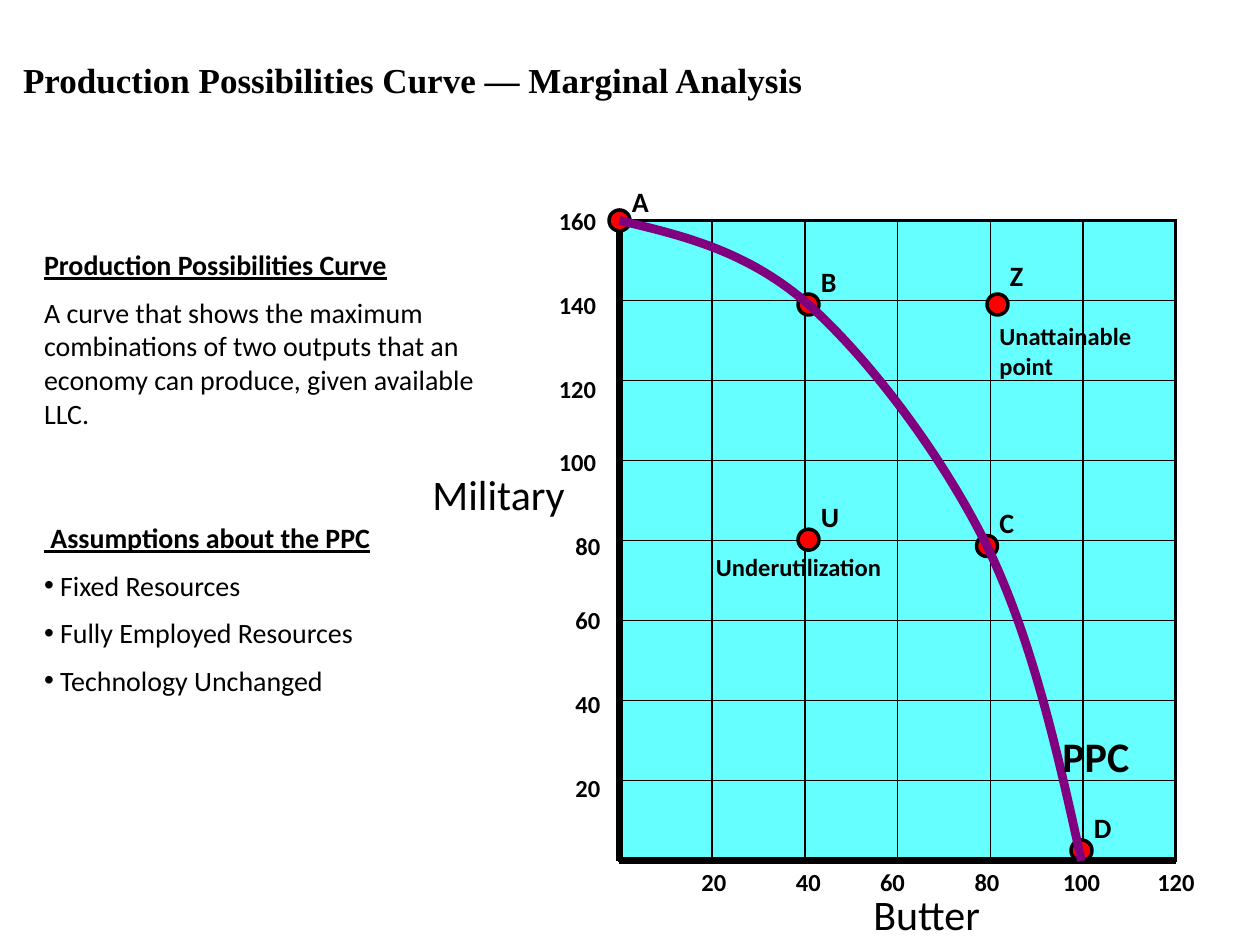
from dataclasses import dataclass

from lxml.etree import SubElement
from pptx import Presentation
from pptx.dml.color import RGBColor
from pptx.enum.shapes import MSO_CONNECTOR, MSO_SHAPE
from pptx.enum.text import MSO_ANCHOR, MSO_AUTO_SIZE, PP_ALIGN
from pptx.oxml.ns import qn
from pptx.util import Pt


@dataclass(frozen=True)
class Theme:
    ink: RGBColor = RGBColor(0, 0, 0)
    grid: RGBColor = RGBColor(0x66, 0xFF, 0xFF)
    dot: RGBColor = RGBColor(0xFF, 0, 0)
    curve: RGBColor = RGBColor(0x80, 0, 0x80)
    title_font: str = "Times New Roman"
    body_font: str = "Calibri"
    title: int = 20
    body: int = 16
    small: int = 14
    large: int = 24


theme = Theme()


def write(box, lines, size, bold=True, align=PP_ALIGN.LEFT, font=theme.body_font):
    frame = box.text_frame
    frame.word_wrap = True
    frame.auto_size = MSO_AUTO_SIZE.SHAPE_TO_FIT_TEXT
    frame.vertical_anchor = MSO_ANCHOR.TOP
    frame.text = "\n".join(lines)
    for index, paragraph in enumerate(frame.paragraphs):
        paragraph.alignment = align
        paragraph.space_before = Pt(size / 2 if index else 0)
        paragraph.font.name = font
        paragraph.font.size = Pt(size)
        paragraph.font.bold = bold
        paragraph.font.color.rgb = theme.ink
    return frame.paragraphs


def place(box, left, top, width, height):
    box.left, box.top, box.width, box.height = map(Pt, (left, top, width, height))
    return box


deck = Presentation()
deck.slide_width, deck.slide_height = Pt(720), Pt(540)
slide = deck.slides.add_slide(deck.slide_layouts[3])
shapes = slide.shapes
title, definition, assumptions = slide.placeholders

write(place(title, 6, 30, 480, 31), ["Production Possibilities Curve — Marginal Analysis"],
      theme.title, font=theme.title_font)

sections = [
    (definition, 138, 276, "", [
        "Production Possibilities Curve",
        "A curve that shows the maximum combinations of two outputs that an "
        "economy can produce, given available LLC."]),
    (assumptions, 294, 258, "•", [
        " Assumptions about the PPC", " Fixed Resources",
        " Fully Employed Resources", " Technology Unchanged"]),
]
for section, top, width, bullet, lines in sections:
    place(section, 18, top, width, 113)
    for index, paragraph in enumerate(write(section, lines, theme.body, bold=False)):
        properties = paragraph._p.get_or_add_pPr()
        properties.set("marL", "0")
        properties.set("indent", "0")
        bullet_mark = SubElement(properties, qn("a:buChar" if bullet and index else "a:buNone"))
        if bullet and index:
            bullet_mark.set("char", bullet)
        properties.extend(properties.findall(qn("a:defRPr")))
        paragraph.font.bold = paragraph.font.underline = index == 0

left, top, right, bottom = 354, 126, 672, 492
columns, rows = 6, 8
grid = shapes.add_table(rows, columns, Pt(left), Pt(top), Pt(right - left), Pt(bottom - top)).table
grid.first_row = grid.horz_banding = False
for column in grid.columns:
    column.width = Pt((right - left) / columns)
for row in grid.rows:
    row.height = Pt((bottom - top) / rows)
for r in range(rows):
    for c in range(columns):
        cell = grid.cell(r, c)
        outer_edges = {"L": c == 0, "R": c == columns - 1, "T": r == 0, "B": r == rows - 1}
        for side, outer in outer_edges.items():
            border = SubElement(cell._tc.get_or_add_tcPr(), qn(f"a:ln{side}"),
                                w=str(Pt(2.25 if outer else 1)))
            SubElement(SubElement(border, qn("a:solidFill")), qn("a:srgbClr"), val=str(theme.ink))
        cell.fill.solid()
        cell.fill.fore_color.rgb = theme.grid

for end_x, end_y, start_y in [(left, bottom, top), (right, bottom, bottom)]:
    axis = shapes.add_connector(MSO_CONNECTOR.STRAIGHT, Pt(left), Pt(start_y), Pt(end_x), Pt(end_y))
    axis.line.color.rgb = theme.ink
    axis.line.width = Pt(4)
    SubElement(axis._element.spPr, qn("a:effectLst"))

points = [("A", 348, 120, 18), ("B", 456, 168, 20.4), ("C", 558, 306, 20.4),
          ("D", 612, 480, 20.4), ("U", 456, 302.4, 20.4), ("Z", 564, 168, 24)]
for name, x, y, rise in points:
    dot = shapes.add_shape(MSO_SHAPE.OVAL, Pt(x), Pt(y), Pt(12), Pt(12))
    dot.shadow.inherit = False
    dot.fill.solid()
    dot.fill.fore_color.rgb = theme.dot
    dot.line.color.rgb = theme.ink
    dot.line.width = Pt(2)
    label = shapes.add_textbox(Pt(x + 6), Pt(y - rise), Pt(30), Pt(26.4))
    write(label, [name], theme.body)

bezier = [(390, 134.64), (426.96, 143.28), (462, 174),
          (496.8, 205.2), (537.84, 259.2), (564, 312),
          (589.68, 365.04), (604.08, 428.4), (618, 492)]
outline = shapes.build_freeform(Pt(left), Pt(top))
outline.add_line_segments([(Pt(x), Pt(y)) for x, y in bezier], close=False)
curve = outline.convert_to_shape()
curve.shadow.inherit = False
curve.fill.background()
curve.line.color.rgb = theme.curve
curve.line.width = Pt(5)
segments = list(curve._element.iter(qn("a:lnTo")))
for start in range(0, len(segments), 3):
    arc = SubElement(segments[start].getparent(), qn("a:cubicBezTo"))
    for segment in segments[start:start + 3]:
        arc.append(segment[0])
        segment.getparent().remove(segment)

captions = [
    ("PPC", 600, 414, 66, 36, theme.large, True),
    ("Underutilization", 402, 312, 120, 24.5, theme.small, True),
    ("Unattainable point", 564, 180, 102, 41, theme.small, True),
    ("Military", 240, 264, 96, 36.5, theme.large, False),
    ("Butter", 492, 504, 102, 36, theme.large, False),
]
for text, x, y, width, height, size, bold in captions:
    write(shapes.add_textbox(Pt(x), Pt(y), Pt(width), Pt(height)), [text], size, bold)

military_ticks = [(330 if i > 3 else 336, y, 20 * (i + 1))
                  for i, y in enumerate([438, 390, 342, 300, 252, 210, 162, 114])]
butter_ticks = [(x, 492, 20 * (i + 1))
                for i, x in enumerate([408, 462, 510, 564, 618, 672])]
for center, y, value in military_ticks + butter_ticks:
    width = 48 if value >= 100 else 36
    tick = shapes.add_textbox(Pt(center - width / 2), Pt(y), Pt(width), Pt(24))
    write(tick, [str(value)], theme.small, align=PP_ALIGN.CENTER)

deck.save("out.pptx")
